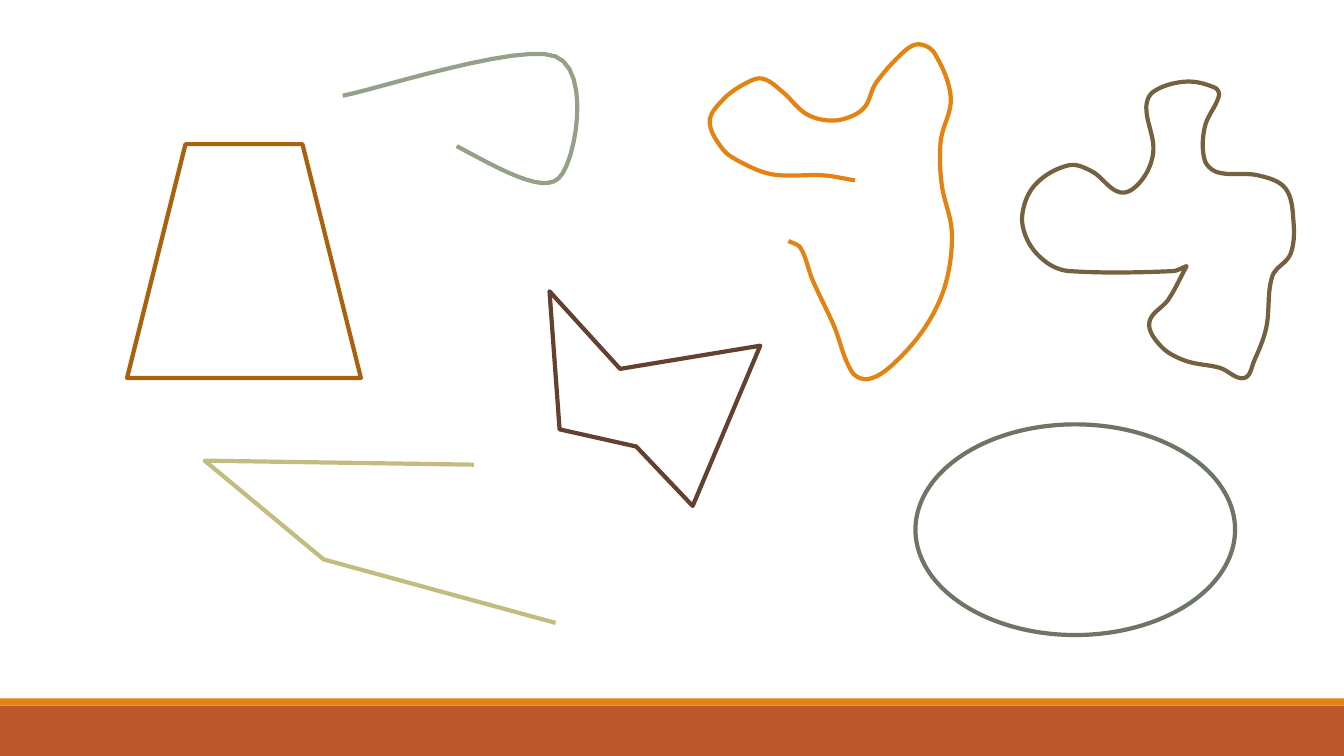
from math import dist

from pptx import Presentation
from pptx import util as u
from pptx.dml.color import RGBColor
from pptx.enum import shapes

RUST = RGBColor(0xBD, 0x58, 0x2C)
ORANGE = RGBColor(0xE4, 0x83, 0x12)
BROWN = RGBColor(0xA9, 0x61, 0x0D)
SLATE = RGBColor(0x6D, 0x76, 0x65)
MAROON = RGBColor(0x63, 0x40, 0x2F)
SAGE = RGBColor(0x94, 0xA0, 0x88)
SAND = RGBColor(0xC2, 0xBC, 0x80)
OLIVE = RGBColor(0x73, 0x61, 0x40)

KINDS = shapes.MSO_SHAPE
WEIGHT = u.Pt(3)
STRIP = 0.07
STEPS = 12

STAR = [(5.55, 4.26), (5.45, 2.89), (6.15, 3.66), (7.54, 3.43),
        (6.87, 5.02), (6.31, 4.43)]
ANGLE = [(4.7, 4.61), (2.03, 4.57), (3.21, 5.55), (5.51, 6.18)]
HOOK = [((4.53, 1.45), (4.96, 1.68), (5.38, 1.92), (5.54, 1.77)),
        ((5.54, 1.77), (5.71, 1.62), (5.87, 0.7), (5.51, 0.56)),
        ((5.51, 0.56), (5.16, 0.42), (3.72, 0.89), (3.4, 0.95))]

BLOB = {
    "arm": [(11.77, 2.64), (11.63, 2.69), (10.61, 2.69), (10.39, 2.61),
            (10.2, 2.4), (10.14, 2.13), (10.27, 1.83), (10.6, 1.64),
            (10.83, 1.7), (11.12, 1.91), (11.33, 1.78)],
    "head": [(11.44, 1.49), (11.37, 1.07), (11.44, 0.91), (11.76, 0.81),
             (12.05, 0.87), (12.09, 0.95), (11.95, 1.26), (11.95, 1.59)],
    "back": [(12.08, 1.71), (12.48, 1.74), (12.75, 1.87), (12.83, 2.2),
             (12.8, 2.52), (12.62, 2.74), (12.56, 3.25)],
    "foot": [(12.44, 3.58), (12.34, 3.75), (12.1, 3.65), (11.76, 3.58),
             (11.52, 3.44), (11.4, 3.2), (11.59, 2.97), (11.77, 2.64)],
}
SCRAWL = {
    "arm": [(8.48, 1.79), (8.17, 1.74), (7.66, 1.73), (7.33, 1.6),
            (7.16, 1.47), (7.04, 1.2), (7.18, 0.98), (7.39, 0.83),
            (7.56, 0.78)],
    "dip": [(7.76, 0.91), (7.98, 1.12), (8.17, 1.19), (8.37, 1.18),
            (8.57, 1.07), (8.69, 0.82)],
    "peak": [(8.98, 0.5), (9.12, 0.44), (9.27, 0.53), (9.43, 0.97),
             (9.33, 1.4)],
    "side": [(9.34, 1.83), (9.44, 2.3), (9.38, 2.81), (9.18, 3.24),
             (8.85, 3.62)],
    "tail": [(8.61, 3.76), (8.45, 3.69), (8.27, 3.23), (8.06, 2.78),
             (7.94, 2.46), (7.82, 2.39)],
}


def shift(dot, way, reach):
    """Return a point moved along a direction."""
    return dot[0] + way[0] * reach, dot[1] + way[1] * reach


def bend(curves):
    """Return points sampled along joined cubic curves."""
    dots = [curves[0][0]]
    for curve in curves:
        for step in range(1, STEPS + 1):
            t = step / STEPS
            s = 1 - t
            mix = (s ** 3, 3 * s * s * t, 3 * s * t * t, t ** 3)
            dots.append(tuple(sum(m * v for m, v in zip(mix, line))
                              for line in zip(*curve)))
    return dots


def smooth(parts):
    """Return a soft line of points through the knots of all parts."""
    knots = [knot for part in parts.values() for knot in part]
    ways = []
    for prev, then in zip(knots[:1] + knots, knots[1:] + knots[-1:]):
        gap = dist(prev, then)
        ways.append(((then[0] - prev[0]) / gap, (then[1] - prev[1]) / gap))
    curves = []
    for a, b, out, into in zip(knots, knots[1:], ways, ways[1:]):
        reach = dist(a, b) / 3
        curves.append((a, shift(a, out, reach), shift(b, into, -reach), b))
    return bend(curves)


def stroke(shape, color):
    """Leave a shape hollow with a thick outline."""
    shape.shadow.inherit = False
    shape.fill.background()
    shape.line.color.rgb = color
    shape.line.width = WEIGHT


def trace(slide, box, dots, color, close):
    """Draw an outline through points measured from the box corner."""
    spots = [tuple(u.Inches(edge + v) for edge, v in zip(box, dot))
             for dot in dots]
    pen = slide.shapes.build_freeform(*spots[0])
    pen.add_line_segments(spots[1:], close=close)
    stroke(pen.convert_to_shape(), color)


def footer(slide, box):
    """Draw the bottom band with its thin strip on top."""
    left, top, width, height = box
    for y, tall, color in ((top + STRIP, height - STRIP, RUST),
                           (top, STRIP, ORANGE)):
        place = map(u.Inches, (left, y, width, tall))
        band = slide.shapes.add_shape(KINDS.RECTANGLE, *place)
        band.shadow.inherit = False
        band.fill.solid()
        band.fill.fore_color.rgb = color
        band.line.fill.background()


def sketch(slide, box):
    """Draw the preset and free outlines inside the box."""
    left, top = box[:2]
    for kind, x, y, width, height, color in (
            (KINDS.TRAPEZOID, 1.26, 1.43, 2.32, 2.32, BROWN),
            (KINDS.OVAL, 9.08, 4.21, 3.17, 2.09, SLATE)):
        place = map(u.Inches, (left + x, top + y, width, height))
        stroke(slide.shapes.add_shape(kind, *place), color)
    for dots, color, close in ((STAR, MAROON, True),
                               (bend(HOOK), SAGE, False),
                               (ANGLE, SAND, False),
                               (smooth(BLOB), OLIVE, True),
                               (smooth(SCRAWL), ORANGE, False)):
        trace(slide, box, dots, color, close)


def main():
    """Build and save the deck."""
    wide, high, foot = 13.33, 7.5, 0.57
    deck = Presentation()
    deck.slide_width, deck.slide_height = u.Inches(wide), u.Inches(high)
    slide = deck.slides.add_slide(deck.slide_layouts[6])
    footer(slide, (0, high - foot, wide, foot))
    sketch(slide, (0, 0, wide, high - foot))
    deck.save("out.pptx")


if __name__ == "__main__":
    main()
